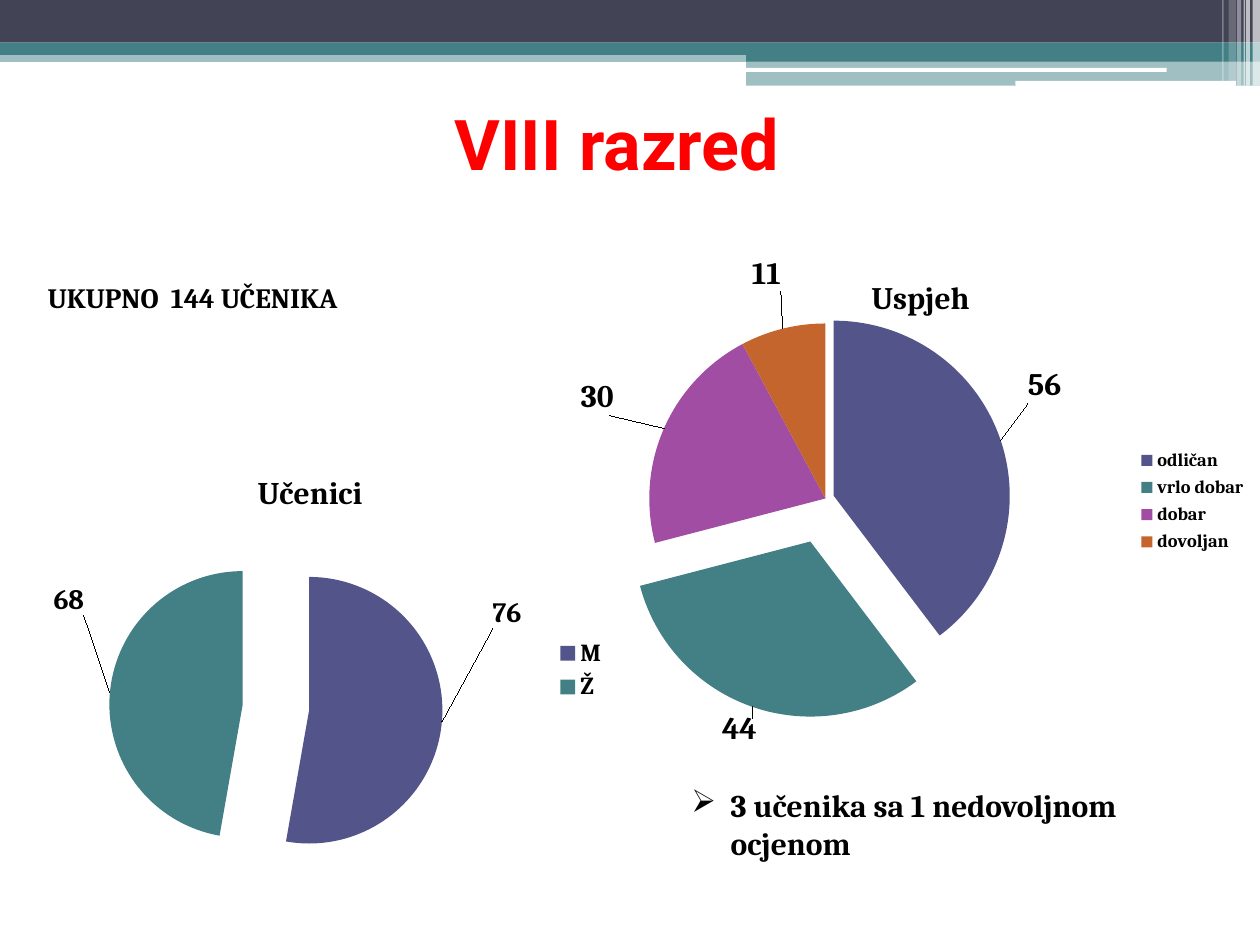
from lxml import etree
from pptx import Presentation
from pptx.chart.data import CategoryChartData
from pptx.dml.color import RGBColor
from pptx.enum.chart import XL_CHART_TYPE, XL_LABEL_POSITION, XL_LEGEND_POSITION
from pptx.enum.shapes import MSO_SHAPE
from pptx.enum.text import MSO_ANCHOR
from pptx.oxml.ns import qn
from pptx.util import Cm, Pt

PIE = XL_CHART_TYPE.PIE
OUTSIDE = XL_LABEL_POSITION.OUTSIDE_END
RIGHT = XL_LEGEND_POSITION.RIGHT
RECT, ROUND = MSO_SHAPE.RECTANGLE, MSO_SHAPE.ROUNDED_RECTANGLE
TOP, MIDDLE = MSO_ANCHOR.TOP, MSO_ANCHOR.MIDDLE

COLORS = {
    "dark": "424456", "teal": "438086", "indigo": "53548A", "purple": "A04DA3",
    "orange": "C4652D", "red": "FF0000", "black": "000000", "white": "FFFFFF",
}
SLICES = ["indigo", "teal", "purple", "orange"]
FONT, TITLE_FONT = "Cambria", "Roboto"

# left, top, width, height in cm, colour, opacity in percent
BARS = [
    (0, 1.02, 25.4, 0.23, "teal", 50),
    (0, 0, 25.4, 0.86, "dark", 100),
    (0, 0.86, 25.4, 0.25, "teal", 100),
    (15.04, 0.99, 10.36, 0.25, "teal", 100),
    (15.04, 1.22, 10.36, 0.51, "teal", 50),
]
LINES = [
    (15.01, 1.37, 8.51, 0.08, "white", 100),
    (20.47, 1.63, 4.45, 0.1, "white", 100),
]
# left, width, height in cm, opacity in percent
STRIPES = [
    (25.25, 0.15, 1.73, 65), (25.12, 0.08, 1.73, 65), (25.07, 0.03, 1.73, 60),
    (24.94, 0.08, 1.73, 40), (24.77, 0.15, 1.63, 20), (24.64, 0.03, 1.63, 30),
]


def rgb(name):
    return RGBColor.from_string(COLORS[name])


def add_bar(slide, left, top, width, height, color, opacity, kind=RECT):
    sp = slide.shapes.add_shape(kind, Cm(left), Cm(top), Cm(width), Cm(height))
    sp.shadow.inherit = False
    sp.fill.solid()
    sp.fill.fore_color.rgb = rgb(color)
    sp.line.fill.background()
    if opacity < 100:
        clr = sp.fill._xPr.find(".//" + qn("a:srgbClr"))
        etree.SubElement(clr, qn("a:alpha"), val=str(opacity * 1000))


def set_font(font, size, bold=True, color="black", name=FONT):
    font.size, font.bold, font.name = Pt(size), bold, name
    font.color.rgb = rgb(color)


def add_text(slide, text, left, top, width, height, size, color="black",
             name=FONT, anchor=TOP, margin=0, bullet=None):
    """Add a bold text box; margin is the paragraph's left margin in cm."""
    tf = slide.shapes.add_textbox(Cm(left), Cm(top), Cm(width), Cm(height)).text_frame
    tf.word_wrap = True
    tf.vertical_anchor = anchor
    p = tf.paragraphs[0]
    r = p.add_run()
    r.text = text
    set_font(r.font, size, color=color, name=name)
    if margin:
        p_pr = p._p.get_or_add_pPr()
        p_pr.set("marL", str(Cm(margin)))
        if bullet:
            p_pr.set("indent", str(-Cm(margin)))
            etree.SubElement(p_pr, qn("a:buChar"), char=bullet)


def make_layout(**values):
    """Build a manual chart layout from its named settings."""
    layout = etree.Element(qn("c:layout"))
    manual = etree.SubElement(layout, qn("c:manualLayout"))
    for key, value in values.items():
        etree.SubElement(manual, qn("c:" + key), val=str(value))
    return layout


def style_slice(point, color, explosion, offset, size):
    """Colour a slice, pull it out and shift its label by a share of the chart."""
    point.format.fill.solid()
    point.format.fill.fore_color.rgb = rgb(color)
    point.format.line.fill.background()
    if explosion:
        d_pt = point.format._element if hasattr(point.format, "_element") else None
        d_pt = point._ser.findall(qn("c:dPt"))[-1] if d_pt is None else d_pt
        exploded = etree.Element(qn("c:explosion"), val=str(explosion))
        d_pt.find(qn("c:idx")).addnext(exploded)
    label = point.data_label
    set_font(label.font, size)
    label.position = OUTSIDE
    d_lbl = label._get_or_add_dLbl()
    d_lbl.find(qn("c:idx")).addnext(make_layout(x=offset[0], y=offset[1]))


def add_pie(slide, box, title, slices, plot_box, label_size, legend_size):
    """Each slice is (category, value, explosion, label offset)."""
    data = CategoryChartData()
    data.categories = [s[0] for s in slices]
    data.add_series("Series 1", [s[1] for s in slices])
    chart = slide.shapes.add_chart(PIE, *map(Cm, box), data).chart
    set_font(chart.font, 10, bold=False)

    chart.has_title = True
    r = chart.chart_title.text_frame.paragraphs[0].add_run()
    r.text = title
    set_font(r.font, 18)

    chart.has_legend = True
    chart.legend.position = RIGHT
    chart.legend.include_in_layout = False
    set_font(chart.legend.font, legend_size)

    plot = chart.plots[0]
    plot.vary_by_categories = True
    series = plot.series[0]
    labels = series.data_labels
    labels.show_value = True
    labels.position = OUTSIDE
    set_font(labels.font, label_size)
    for i, (_, _, explosion, offset) in enumerate(slices):
        style_slice(series.points[i], SLICES[i], explosion, offset, label_size)

    area = chart._chartSpace.find(".//" + qn("c:plotArea"))
    for old in area.findall(qn("c:layout")):
        area.remove(old)
    x, y, w, h = plot_box
    area.insert(0, make_layout(layoutTarget="inner", xMode="edge", yMode="edge",
                               x=x, y=y, w=w, h=h))


def main():
    prs = Presentation()
    prs.slide_width, prs.slide_height = Cm(25.4), Cm(19.05)
    slide = prs.slides.add_slide(prs.slide_layouts[6])

    for bar in BARS:
        add_bar(slide, *bar)
    for line in LINES:
        add_bar(slide, *line, kind=ROUND)
    for left, width, height, opacity in STRIPES:
        add_bar(slide, left, 0, width, height, "white", opacity)

    add_text(slide, "VIII razred", 1.3, 1.52, 22.86, 2.72, 40, color="red",
             name=TITLE_FONT, anchor=MIDDLE, margin=7.62)
    add_pie(slide, (0, 9.09, 12.5, 8.84), "Učenici",
            [("M", 76, 25, (0.07, -0.25)), ("Ž", 68, 25, (-0.03, -0.21))],
            (0.23, 0.28, 0.43, 0.61), label_size=16, legend_size=14)
    add_text(slide, "UKUPNO  144 UČENIKA", 0.71, 5.54, 10, 1.19, 16)
    add_pie(slide, (11.71, 5.13, 13.69, 10), "Uspjeh",
            [("odličan", 56, 5, (0.03, -0.07)), ("vrlo dobar", 44, 26, (0.01, 0.01)),
             ("dobar", 30, 0, (-0.07, -0.02)), ("dovoljan", 11, 0, (0, -0.06))],
            (0.04, 0.14, 0.64, 0.71), label_size=18, legend_size=10.5)
    add_text(slide, "3 učenika sa 1 nedovoljnom ocjenom", 13.69, 15.72, 11, 1.8, 18,
             margin=0.79, bullet="➢")
    prs.save("out.pptx")


if __name__ == "__main__":
    main()
